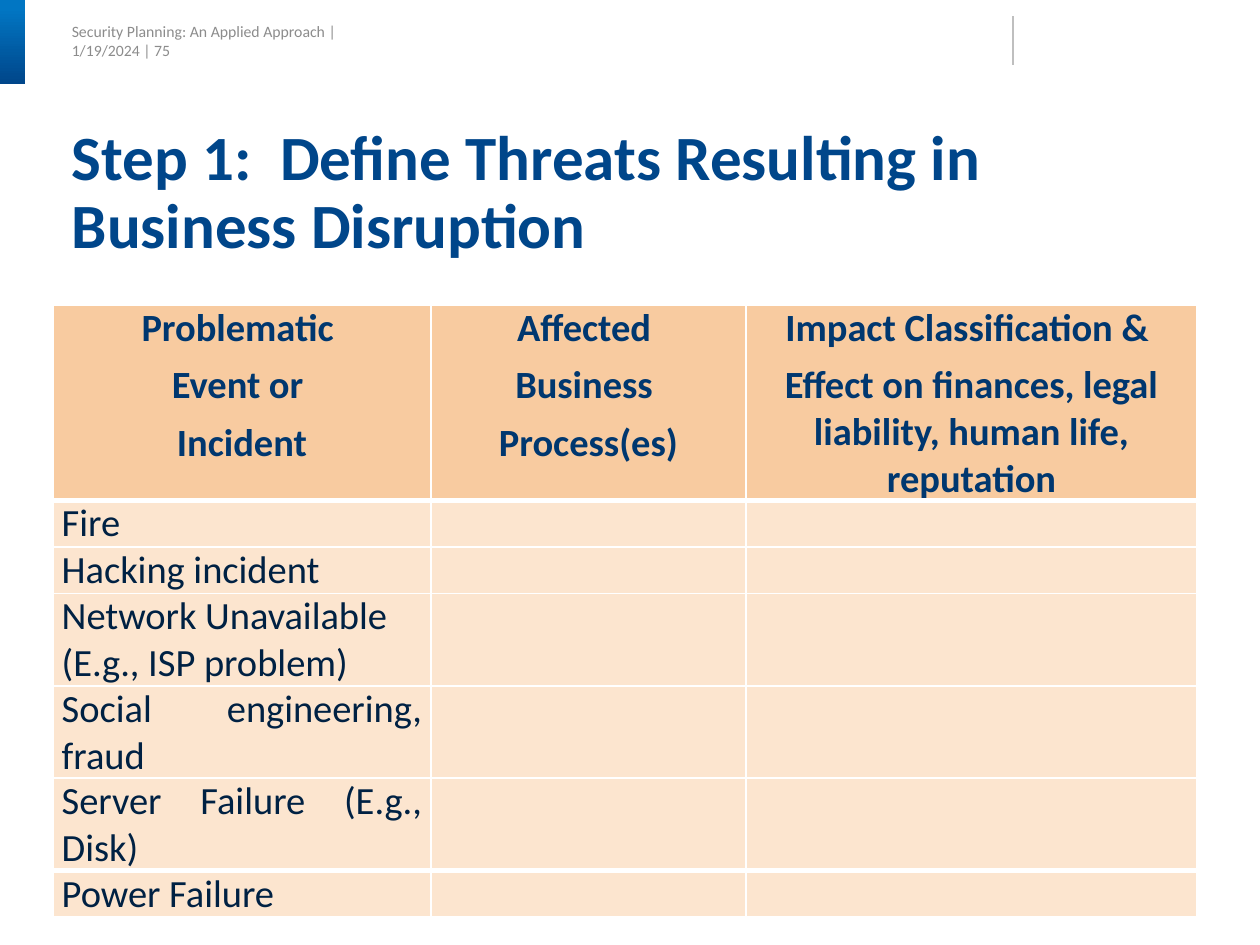
from lxml import etree
from pptx import Presentation
from pptx.dml.color import RGBColor
from pptx.enum.shapes import MSO_CONNECTOR, MSO_SHAPE
from pptx.enum.text import MSO_ANCHOR, MSO_AUTO_SIZE, PP_ALIGN
from pptx.oxml.ns import qn
from pptx.util import Inches, Pt

STRAIGHT = MSO_CONNECTOR.STRAIGHT
RECTANGLE = MSO_SHAPE.RECTANGLE
TOP, MIDDLE = MSO_ANCHOR.TOP, MSO_ANCHOR.MIDDLE
NO_FIT = MSO_AUTO_SIZE.NONE
LEFT, CENTER, JUSTIFY = PP_ALIGN.LEFT, PP_ALIGN.CENTER, PP_ALIGN.JUSTIFY

BRIGHT_BLUE = RGBColor(0x01, 0x76, 0xC3)
TITLE_BLUE = RGBColor(0x00, 0x46, 0x8A)
HEADER_BLUE = RGBColor(0x00, 0x37, 0x6F)
BODY_BLUE = RGBColor(0x00, 0x21, 0x43)
GREY = RGBColor(0x8C, 0x8C, 0x8C)
RULE_GREY = RGBColor(0xBF, 0xBF, 0xBF)
HEADER_FILL = RGBColor(0xF8, 0xCB, 0xA0)
BODY_FILL = RGBColor(0xFC, 0xE5, 0xCF)
WHITE = RGBColor(0xFF, 0xFF, 0xFF)

FONT = "Calibri"
MARGIN = 0.57
LINE_ROW = 0.37
COLUMNS = [3, 2.5, 3.58]
HEADERS = [
    ["Problematic ", "Event or ", "Incident"],
    ["Affected ", "Business ", "Process(es)"],
    ["Impact Classification & ",
     "Effect on finances, legal liability, human life, reputation"],
]
THREATS = [
    (["Fire"], 1),
    (["Hacking incident"], 1),
    (["Network Unavailable", "(E.g., ISP problem)"], 2),
    (["Social engineering, fraud"], 2),
    (["Server Failure (E.g., Disk)"], 2),
    (["Power Failure"], 1),
]


def write(frame, lines, size, color, bold=False, align=LEFT, after=0):
    """Fill a text frame with one paragraph per line."""
    for index, line in enumerate(lines):
        para = frame.paragraphs[0] if index == 0 else frame.add_paragraph()
        para.text = line
        para.alignment = align
        para.space_after = Pt(after)
        para.font.name = FONT
        para.font.size = Pt(size)
        para.font.bold = bold
        para.font.color.rgb = color


def set_margins(target, left=0, right=0, bottom=0):
    """Set the inner margins of a text frame or cell, with none on top."""
    target.margin_left, target.margin_right = Inches(left), Inches(right)
    target.margin_top, target.margin_bottom = 0, Inches(bottom)


def add_running_header(page):
    """Add the corner bar, the running text and the thin rule."""
    bar = page.shapes.add_shape(RECTANGLE, 0, 0, Inches(0.2), Inches(0.67))
    bar.shadow.inherit = False
    bar.line.fill.background()
    bar.fill.gradient()
    bar.fill.gradient_angle = 270
    stops = [(0.1, BRIGHT_BLUE), (1, TITLE_BLUE)]
    for stop, (position, color) in zip(bar.fill.gradient_stops, stops):
        stop.position = position
        stop.color.rgb = color

    box = page.shapes.add_textbox(
        Inches(MARGIN), Inches(0.23), Inches(2.84), Inches(0.23))
    frame = box.text_frame
    frame.word_wrap = False
    frame.vertical_anchor = MIDDLE
    set_margins(frame, right=0.2, bottom=0.04)
    write(frame, ["Security Planning: An Applied Approach | 1/19/2024 | 75"], 9, GREY)

    rule = page.shapes.add_connector(
        STRAIGHT, Inches(8.04), Inches(0.13), Inches(8.04), Inches(0.52))
    rule.line.color.rgb = RULE_GREY
    rule.line.width = Pt(0.75)
    etree.SubElement(rule.element.spPr, qn("a:effectLst"))


def add_title(page):
    """Place and format the title placeholder."""
    title = page.shapes.title
    title.left, title.top = Inches(MARGIN), Inches(1)
    title.width, title.height = Inches(8.92), Inches(1.08)
    frame = title.text_frame
    frame.word_wrap = True
    frame.auto_size = NO_FIT
    frame.vertical_anchor = TOP
    set_margins(frame)
    write(frame, ["Step 1:  Define Threats Resulting in Business Disruption"],
          36, TITLE_BLUE, bold=True)
    frame.paragraphs[0].line_spacing = 0.9


def add_borders(cell, top, bottom):
    """Draw white cell borders with the given top and bottom widths."""
    properties = cell._tc.get_or_add_tcPr()
    for side, width in (("L", 1), ("R", 1), ("T", top), ("B", bottom)):
        line = etree.SubElement(properties, qn(f"a:ln{side}"), w=str(Pt(width)))
        fill = etree.SubElement(line, qn("a:solidFill"))
        etree.SubElement(fill, qn("a:srgbClr"), val=str(WHITE))


def format_cell(cell, fill, top=1, bottom=1):
    """Give a cell its margins, borders and fill."""
    set_margins(cell, 0.07, 0.07)
    add_borders(cell, top, bottom)
    cell.fill.solid()
    cell.fill.fore_color.rgb = fill


def add_threat_table(page):
    """Add the threat table with its header and empty answer columns."""
    heights = [1.55] + [0.73 if lines == 2 else LINE_ROW for _, lines in THREATS]
    table = page.shapes.add_table(
        len(heights), len(COLUMNS), Inches(0.42), Inches(2.42),
        Inches(sum(COLUMNS)), Inches(sum(heights))).table
    table.horz_banding = False
    for column, width in zip(table.columns, COLUMNS):
        column.width = Inches(width)
    for row, height in zip(table.rows, heights):
        row.height = Inches(height)

    for cell, lines in zip(table.rows[0].cells, HEADERS):
        format_cell(cell, HEADER_FILL, bottom=3)
        write(cell.text_frame, lines, 22, HEADER_BLUE, True, CENTER, after=6)
    for index, (lines, _) in enumerate(THREATS, start=1):
        last = len(THREATS)
        for cell in table.rows[index].cells:
            format_cell(cell, BODY_FILL, top=3 if index in (1, last) else 1,
                        bottom=3 if index == last - 1 else 1)
        write(table.cell(index, 0).text_frame, lines, 22, BODY_BLUE, align=JUSTIFY)


def main():
    """Build the slide and save the deck."""
    deck = Presentation()
    deck.slide_width, deck.slide_height = Inches(10), Inches(7.5)
    page = deck.slides.add_slide(deck.slide_layouts[5])
    add_running_header(page)
    add_title(page)
    add_threat_table(page)
    deck.save("out.pptx")


if __name__ == "__main__":
    main()
